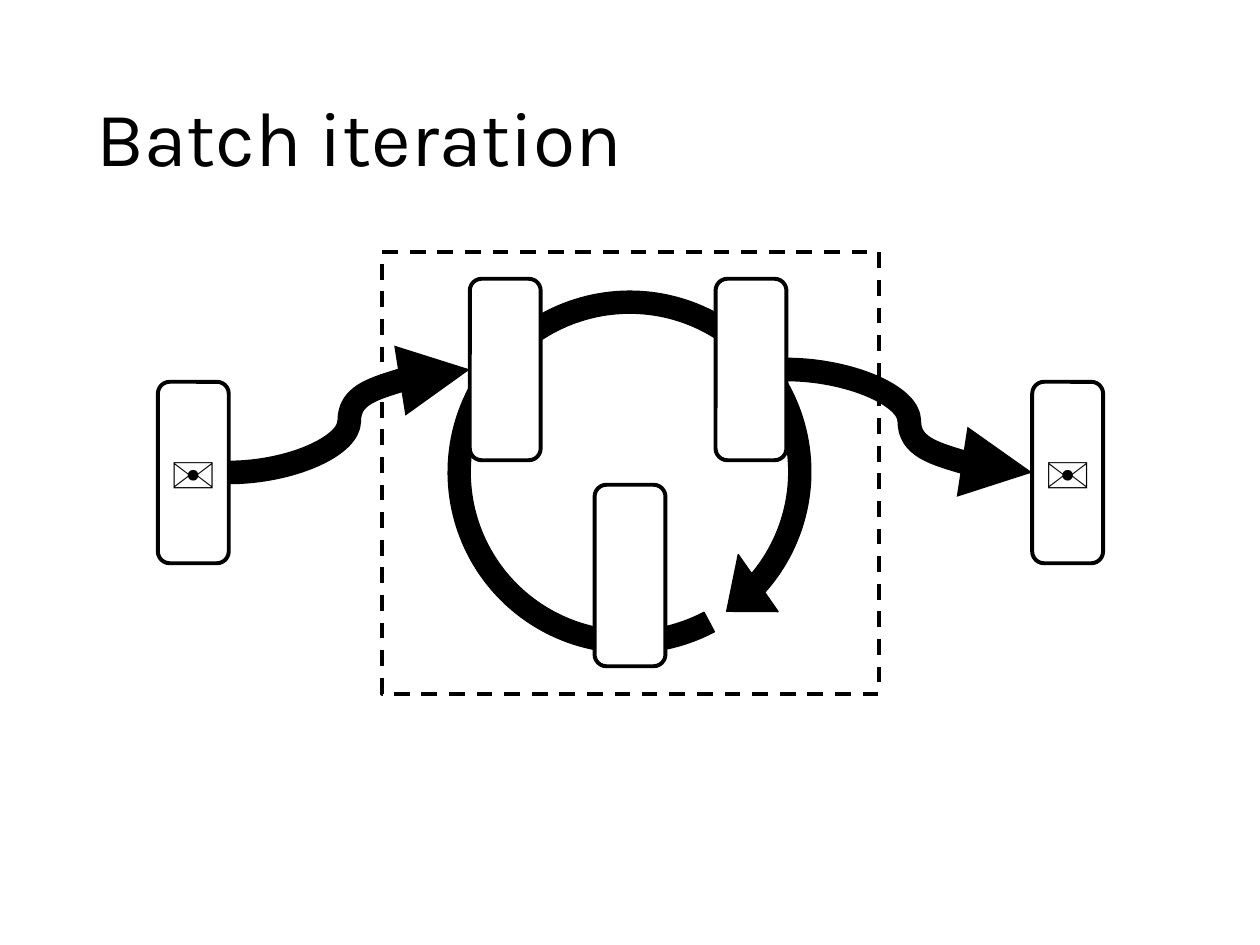
import lxml.etree
import pptx
import pptx.dml.color
import pptx.enum.dml
import pptx.enum.shapes
import pptx.enum.text
import pptx.oxml.ns
import pptx.util

Inches, Pt = pptx.util.Inches, pptx.util.Pt
SHAPES = pptx.enum.shapes.MSO_SHAPE
ALIGN = pptx.enum.text.PP_ALIGN
ANCHOR = pptx.enum.text.MSO_ANCHOR

# Content
TITLE = "Batch iteration"
MESSAGE = "✉"
BOX_WIDTH, BOX_HEIGHT = 0.75, 1.92
BOXES = {  # left, top
    "source": (1.67, 4.04),
    "loop start": (4.97, 2.95),
    "loop end": (7.57, 2.95),
    "loop middle": (6.29, 5.13),
    "sink": (10.92, 4.04),
}
FLOWS = [("source", "loop start"), ("loop end", "sink")]
MESSAGE_HOLDERS = ["source", "sink"]
MESSAGE_SIZE = 0.91
TITLE_AREA = (0.92, 0.53, 11.5, 1.93)
CYCLE_AREA = (4.49, 2.83, 4.34, 4.33)
CYCLE_ADJUSTMENTS = (0.054, 8.578, 32.76, 45.488, 0.085)
BATCH_AREA = (4.04, 2.67, 5.26, 4.67)

THEME = {
    "ink": pptx.dml.color.RGBColor(0, 0, 0),
    "paper": pptx.dml.color.RGBColor(255, 255, 255),
    "title": {"name": "Karla", "size": Pt(58.7), "bold": False},
    "message": {"name": "Karla", "size": Pt(48), "bold": True},
    "thin": Pt(1),
    "border": Pt(3),
    "flow": Pt(18),
}


def add_shape(page, kind, area, fill, width):
    shape = page.shapes.add_shape(kind, *map(Inches, area))
    shape.shadow.inherit = False
    if fill is None:
        shape.fill.background()
    else:
        shape.fill.solid()
        shape.fill.fore_color.rgb = fill
    shape.line.color.rgb = THEME["ink"]
    shape.line.width = width
    return shape


def add_text(page, area, text, style, frame_format, para_format):
    frame = page.shapes.add_textbox(*map(Inches, area)).text_frame
    para = frame.paragraphs[0]
    span = para.add_run()
    span.text = text
    span.font.color.rgb = THEME["ink"]
    for target, values in ((frame, frame_format), (para, para_format),
                           (span.font, THEME[style])):
        for name, value in values.items():
            setattr(target, name, value)


def add_flow(page, start, end):
    """Curved arrow from the right side of one box to the left side of another."""
    (start_left, start_top), (end_left, end_top) = BOXES[start], BOXES[end]
    ends = (start_left + BOX_WIDTH, start_top + BOX_HEIGHT / 2,
            end_left, end_top + BOX_HEIGHT / 2)
    flow = page.shapes.add_connector(
        pptx.enum.shapes.MSO_CONNECTOR.CURVE, *map(Inches, ends))
    flow.line.color.rgb = THEME["ink"]
    flow.line.width = THEME["flow"]
    qn = pptx.oxml.ns.qn
    properties = flow.line._get_or_add_ln()
    lxml.etree.SubElement(properties, qn("a:tailEnd"), type="triangle")
    lxml.etree.SubElement(properties.getparent(), qn("a:effectLst"))


def main():
    deck = pptx.Presentation()
    deck.slide_width, deck.slide_height = Inches(13.33), Inches(10)
    page = deck.slides.add_slide(deck.slide_layouts[6])

    # Cycle arrow behind everything
    cycle = add_shape(page, SHAPES.CIRCULAR_ARROW, CYCLE_AREA,
                      THEME["ink"], THEME["thin"])
    for index, value in enumerate(CYCLE_ADJUSTMENTS):
        cycle.adjustments[index] = value
    cycle.rotation = 346.2

    # Title
    add_text(page, TITLE_AREA, TITLE, "title",
             {"word_wrap": True, "vertical_anchor": ANCHOR.MIDDLE},
             {"line_spacing": 0.9})

    # Flows in and out of the batch
    for start, end in FLOWS:
        add_flow(page, start, end)

    # Processing boxes
    for left, top in BOXES.values():
        add_shape(page, SHAPES.ROUNDED_RECTANGLE,
                  (left, top, BOX_WIDTH, BOX_HEIGHT),
                  THEME["paper"], THEME["border"])

    # Messages, centred in their boxes
    for holder in MESSAGE_HOLDERS:
        left, top = BOXES[holder]
        area = (left + (BOX_WIDTH - MESSAGE_SIZE) / 2,
                top + (BOX_HEIGHT - MESSAGE_SIZE) / 2,
                MESSAGE_SIZE, MESSAGE_SIZE)
        add_text(page, area, MESSAGE, "message",
                 {"word_wrap": False}, {"alignment": ALIGN.CENTER})

    # Dashed batch boundary
    batch = add_shape(page, SHAPES.RECTANGLE, BATCH_AREA, None, THEME["border"])
    batch.line.dash_style = pptx.enum.dml.MSO_LINE.DASH

    deck.save("out.pptx")


if __name__ == "__main__":
    main()
